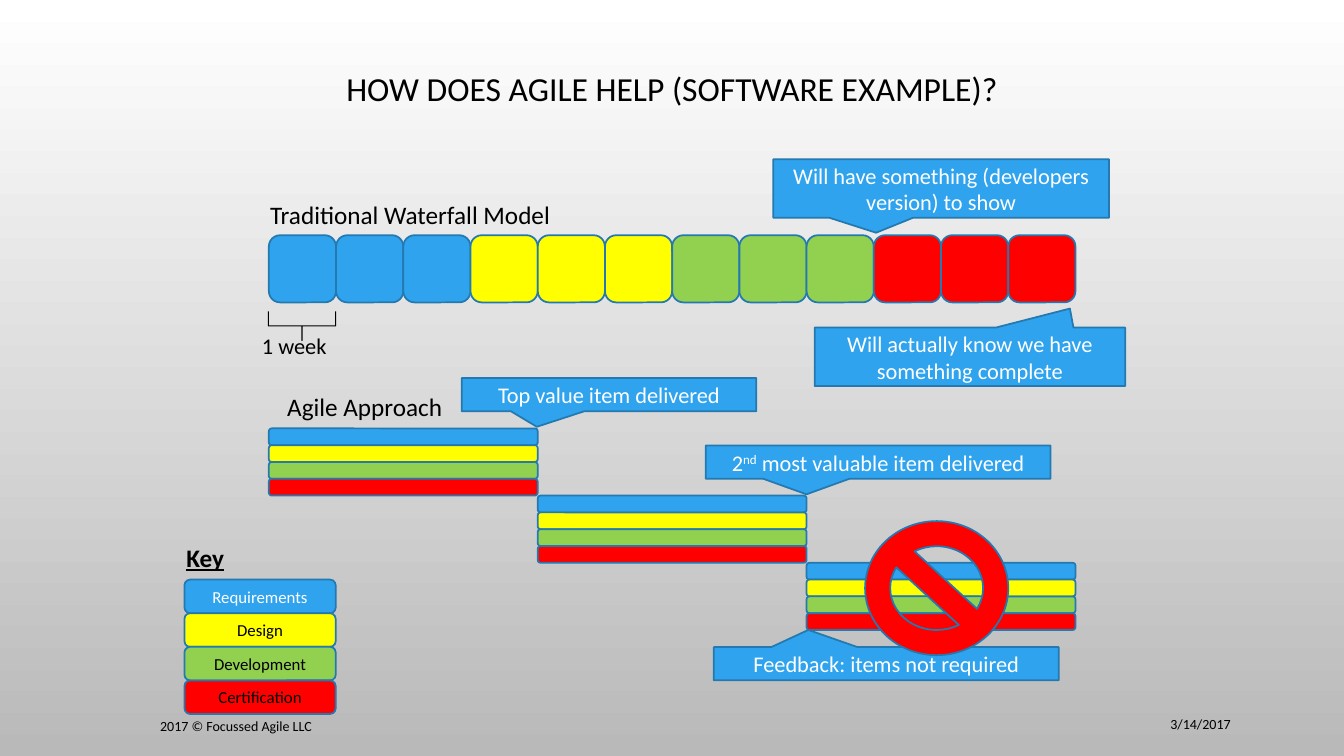
"""Build a slide comparing waterfall and agile delivery of software."""
from dataclasses import dataclass

import pptx
import pptx.dml.color
import pptx.enum.shapes
import pptx.enum.text
import pptx.shapes.autoshape
import pptx.slide
import pptx.text.text
import pptx.util

Inches = pptx.util.Inches
RGBColor = pptx.dml.color.RGBColor
Preset = pptx.enum.shapes.MSO_SHAPE
Align = pptx.enum.text.PP_ALIGN
Anchor = pptx.enum.text.MSO_ANCHOR

BLACK = RGBColor(0x00, 0x00, 0x00)
WHITE = RGBColor(0xFF, 0xFF, 0xFF)
GRAY = RGBColor(0xB9, 0xB9, 0xB9)
BLUE = RGBColor(0x2F, 0xA3, 0xEE)
OUTLINE = RGBColor(0x23, 0x79, 0xB0)
YELLOW = RGBColor(0xFF, 0xFF, 0x00)
GREEN = RGBColor(0x92, 0xD0, 0x50)
RED = RGBColor(0xFF, 0x00, 0x00)

WEEK = 2 / 3
WEEKS_PER_STAGE = 3
START = 8 / 3
WATERFALL_TOP = 7 / 3
AGILE_TOP = 4.25
ITERATIONS = 3
KEY_LEFT, KEY_TOP, KEY_WIDTH, KEY_HEIGHT = 1.83, 5.75, 1.5, 1 / 3


@dataclass(frozen=True)
class Box:
    left: float
    top: float
    width: float
    height: float

    def lengths(self) -> tuple[int, int, int, int]:
        return Inches(self.left), Inches(self.top), Inches(self.width), Inches(self.height)


@dataclass(frozen=True)
class Stage:
    name: str
    fill: RGBColor
    text_color: RGBColor = BLACK


@dataclass(frozen=True)
class Callout:
    box: Box
    tip: tuple[float, float]
    runs: tuple[str, ...]


@dataclass(frozen=True)
class Label:
    box: Box
    text: str
    size: int
    wrap: bool = False
    middle: bool = False
    centered: bool = False
    heading: bool = False


STAGES = (
    Stage("Requirements", BLUE, WHITE),
    Stage("Design", YELLOW),
    Stage("Development", GREEN),
    Stage("Certification", RED),
)

CALLOUTS = (
    Callout(Box(7.67, 1.58, 3.33, 0.58), (-0.194, 0.757),
            ("Will have something (developers version) to show",)),
    Callout(Box(8.08, 3.25, 3.08, 0.58), (0.322, -0.826),
            ("Will actually know we have something complete",)),
    Callout(Box(4.58, 3.75, 2.92, 0.33), (-0.245, 0.968), ("Top value item delivered",)),
    Callout(Box(7, 4.42, 3.42, 0.33), (-0.208, 0.968),
            ("2", "nd", " most valuable item delivered")),
    Callout(Box(7.08, 6.42, 3.42, 0.33), (-0.226, -1.017), ("Feedback: items not required",)),
)

LABELS = (
    Label(Box(1, 0.02, 11.33, 1.75), "HOW DOES AGILE HELP (SOFTWARE EXAMPLE)?", 24,
          wrap=True, middle=True, centered=True),
    Label(Box(2.58, 1.93, 3.04, 0.4), "Traditional Waterfall Model", 18),
    Label(Box(2.75, 3.83, 1.79, 0.4), "Agile Approach", 18),
    Label(Box(1.75, 5.33, 0.61, 0.4), "Key", 18, heading=True),
    Label(Box(2.5, 3.25, 0.85, 0.37), "1 week", 16),
    Label(Box(11.51, 6.98, 1.6, 0.4), "3/14/2017", 10, wrap=True, middle=True),
    Label(Box(1.49, 7, 7.3, 0.4), "2017 © Focussed Agile LLC", 10, wrap=True, middle=True),
)


def set_font(paragraph: pptx.text.text._Paragraph, size: int, color: RGBColor) -> None:
    paragraph.font.name = "Calibri"
    paragraph.font.size = pptx.util.Pt(size)
    paragraph.font.color.rgb = color


def add_block(slide: pptx.slide.Slide, preset: Preset, box: Box,
              fill: RGBColor) -> pptx.shapes.autoshape.Shape:
    shape = slide.shapes.add_shape(preset, *box.lengths())
    shape.shadow.inherit = False
    shape.fill.solid()
    shape.fill.fore_color.rgb = fill
    shape.line.color.rgb = OUTLINE
    shape.line.width = pptx.util.Pt(1.25)
    return shape


def write_centered(shape: pptx.shapes.autoshape.Shape, runs: tuple[str, ...],
                   size: int, color: RGBColor) -> None:
    frame = shape.text_frame
    frame.word_wrap = True
    frame.vertical_anchor = Anchor.MIDDLE
    paragraph = frame.paragraphs[0]
    paragraph.alignment = Align.CENTER
    set_font(paragraph, size, color)
    for text in runs:
        run = paragraph.add_run()
        run.text = text
        if text == "nd":
            run._r.get_or_add_rPr().set("baseline", "30000")


def add_callout(slide: pptx.slide.Slide, callout: Callout) -> None:
    shape = add_block(slide, Preset.RECTANGULAR_CALLOUT, callout.box, BLUE)
    shape.adjustments[0], shape.adjustments[1] = callout.tip
    write_centered(shape, callout.runs, 16, WHITE)


def add_label(slide: pptx.slide.Slide, label: Label) -> None:
    frame = slide.shapes.add_textbox(*label.box.lengths()).text_frame
    frame.word_wrap = label.wrap
    frame.vertical_anchor = Anchor.MIDDLE if label.middle else Anchor.TOP
    paragraph = frame.paragraphs[0]
    paragraph.text = label.text
    set_font(paragraph, label.size, BLACK)
    if label.centered:
        paragraph.alignment = Align.CENTER
        paragraph.line_spacing = 0.9
    if label.heading:
        paragraph.font.bold = True
        paragraph.font.underline = True


def add_background(slide: pptx.slide.Slide) -> None:
    fill = slide.background.fill
    fill.gradient()
    fill.gradient_angle = 270
    for stop, color, position in zip(fill.gradient_stops, (WHITE, GRAY), (0, 1)):
        stop.color.rgb = color
        stop.position = position


def add_stages(slide: pptx.slide.Slide) -> None:
    bar_width, bar_height = len(STAGES) * WEEK, WEEK / len(STAGES)
    for row, stage in enumerate(STAGES):
        for week in range(WEEKS_PER_STAGE):
            left = START + (row * WEEKS_PER_STAGE + week) * WEEK
            add_block(slide, Preset.ROUNDED_RECTANGLE,
                      Box(left, WATERFALL_TOP, WEEK, WEEK), stage.fill)
        for iteration in range(ITERATIONS):
            top = AGILE_TOP + iteration * WEEK + row * bar_height
            add_block(slide, Preset.ROUNDED_RECTANGLE,
                      Box(START + iteration * bar_width, top, bar_width, bar_height), stage.fill)
        entry = add_block(slide, Preset.ROUNDED_RECTANGLE,
                          Box(KEY_LEFT, KEY_TOP + row * KEY_HEIGHT, KEY_WIDTH, KEY_HEIGHT),
                          stage.fill)
        write_centered(entry, (stage.name,), 12, stage.text_color)


def add_week_brace(slide: pptx.slide.Slide) -> None:
    brace = slide.shapes.add_shape(Preset.RIGHT_BRACE, *Box(2.85, 2.9, 0.29, WEEK).lengths())
    brace.rotation = 90
    brace.adjustments[0] = 0
    brace.shadow.inherit = False
    brace.fill.background()
    brace.line.color.rgb = BLACK
    brace.line.width = pptx.util.Pt(0.75)


def main() -> None:
    presentation = pptx.Presentation()
    presentation.slide_width, presentation.slide_height = Inches(13.33), Inches(7.5)
    slide = presentation.slides.add_slide(presentation.slide_layouts[6])
    add_background(slide)
    for callout in CALLOUTS:
        add_callout(slide, callout)
    add_stages(slide)
    add_block(slide, Preset.NO_SYMBOL, Box(8.58, 5.17, 1.42, 1.33), RED)
    add_week_brace(slide)
    for label in LABELS:
        add_label(slide, label)
    presentation.save("out.pptx")


if __name__ == "__main__":
    main()
